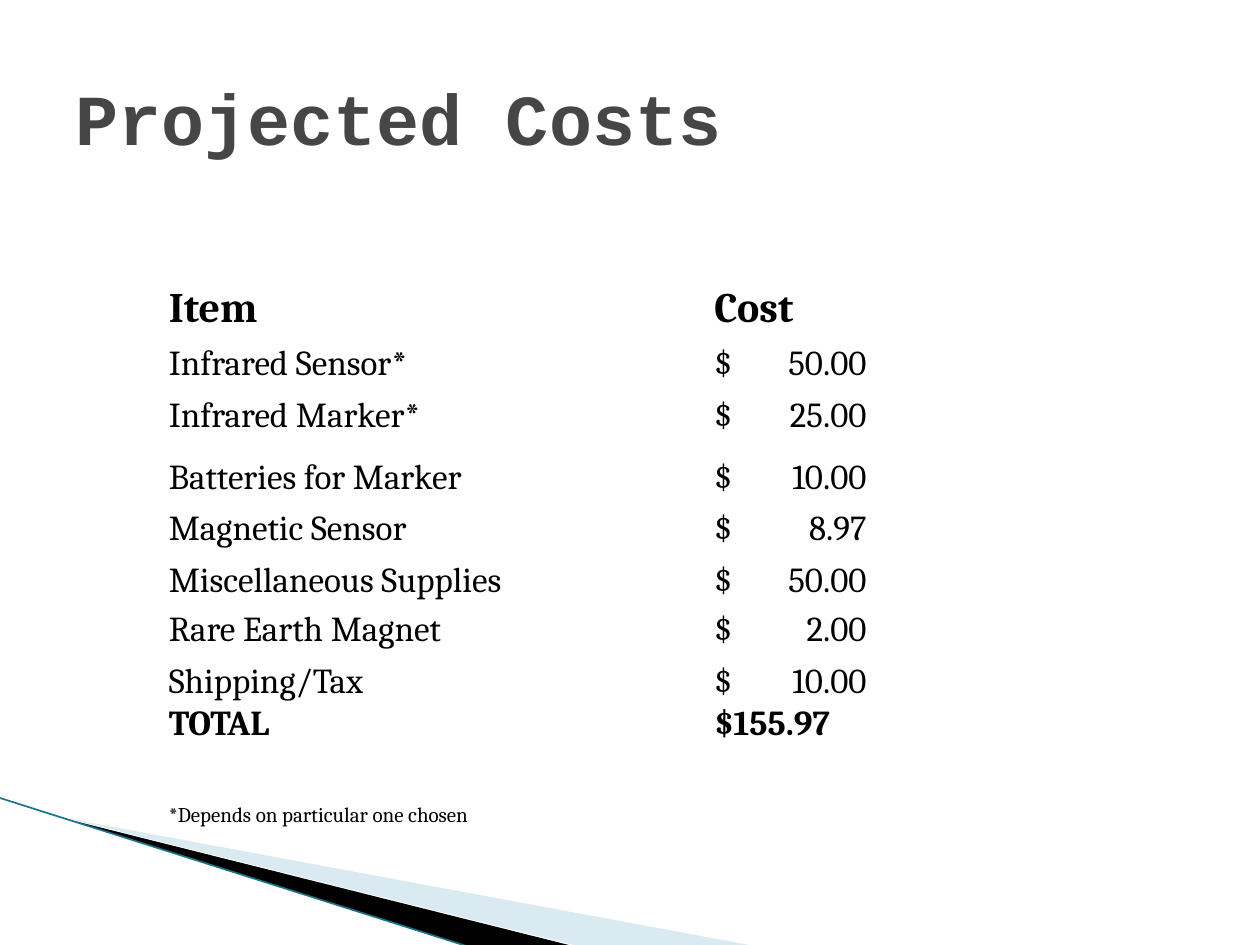
from lxml import etree
from pptx import Presentation
from pptx import util as u
from pptx.dml.color import RGBColor
from pptx.enum import shapes, text
from pptx.oxml import ns

BLACK = RGBColor(0x00, 0x00, 0x00)
GRAY = RGBColor(0x46, 0x46, 0x46)
PALE_BLUE = RGBColor(0xA0, 0xCB, 0xDC)
TEAL = RGBColor(0x1B, 0x75, 0x87)

COSTS = [
    ("Item", "Cost"),
    ("Infrared Sensor*", "$\t50.00"),
    ("Infrared Marker*", "$\t25.00"),
    ("Batteries for Marker", "$\t10.00"),
    ("Magnetic Sensor", "$\t8.97"),
    ("Miscellaneous Supplies", "$\t50.00"),
    ("Rare Earth Magnet", "$\t2.00"),
    ("Shipping/Tax", "$\t10.00"),
    ("TOTAL", "$155.97"),
    ("", ""),
    ("*Depends on particular one chosen", ""),
]
COLUMN_WIDTHS = [307.4, 118.8]
ROW_HEIGHTS = [28.1, 29.5, 29.5, 35.3, 29.5, 29.5, 28.1, 29.5, 24.5, 23.8, 23.8]
ROW_FORMATS = {0: (24, True), 8: (20, True), 10: (12, False)}
AMOUNT_TAB = 87


def set_values(target, values):
    for name, value in values.items():
        setattr(target, name, value)


class SlideBuilder:
    title_format = {"name": "Courier New", "size": u.Pt(41), "bold": True}
    cell_format = {"name": "Cambria"}

    def __init__(self, slide):
        self.slide = slide

    def add_text(self, paragraph, content, font_format, color):
        run = paragraph.add_run()
        run.text = content
        set_values(run.font, font_format)
        run.font.color.rgb = color

    def title(self, content, left, top, width, height):
        shape = self.slide.shapes.title
        set_values(shape, {"left": u.Pt(left), "top": u.Pt(top),
                           "width": u.Pt(width), "height": u.Pt(height)})
        shape.text_frame.vertical_anchor = text.MSO_ANCHOR.MIDDLE
        paragraph = shape.text_frame.paragraphs[0]
        paragraph.alignment = text.PP_ALIGN.LEFT
        self.add_text(paragraph, content, self.title_format, GRAY)

    def wedge(self, points, color, opacity=100):
        builder = self.slide.shapes.build_freeform(*points[0], scale=u.Pt(1))
        builder.add_line_segments(points[1:], close=True)
        shape = builder.convert_to_shape()
        shape.shadow.inherit = False
        shape.fill.solid()
        shape.fill.fore_color.rgb = color
        shape.line.fill.background()
        if opacity < 100:
            fill_color = shape._element.spPr.find(".//" + ns.qn("a:srgbClr"))
            alpha = etree.SubElement(fill_color, ns.qn("a:alpha"))
            alpha.set("val", str(opacity * 1000))

    def line(self, start, end, color, width):
        connector = self.slide.shapes.add_connector(
            shapes.MSO_CONNECTOR.STRAIGHT, *map(u.Pt, start + end))
        connector.line.color.rgb = color
        connector.line.width = u.Pt(width)
        etree.SubElement(connector._element.spPr, ns.qn("a:effectLst"))

    def cell(self, cell, content, size, bold, indent):
        set_values(cell, {"margin_left": u.Pt(indent), "margin_right": u.Pt(0.7),
                          "margin_top": u.Pt(0.7), "margin_bottom": 0,
                          "vertical_anchor": text.MSO_ANCHOR.BOTTOM})
        cell.fill.background()
        if not content:
            return
        paragraph = cell.text_frame.paragraphs[0]
        if "\t" in content:
            tabs = etree.SubElement(paragraph._p.get_or_add_pPr(), ns.qn("a:tabLst"))
            tab = etree.SubElement(tabs, ns.qn("a:tab"))
            tab.set("pos", str(int(u.Pt(AMOUNT_TAB))))
            tab.set("algn", "r")
        font_format = {**self.cell_format, "size": u.Pt(size), "bold": bold}
        self.add_text(paragraph, content, font_format, BLACK)

    def table(self, rows, left, top):
        frame = self.slide.shapes.add_table(
            len(rows), len(COLUMN_WIDTHS), u.Pt(left), u.Pt(top),
            u.Pt(sum(COLUMN_WIDTHS)), u.Pt(sum(ROW_HEIGHTS)))
        table = frame.table
        set_values(table, {"first_row": False, "horz_banding": False})
        for column, width in zip(table.columns, COLUMN_WIDTHS):
            column.width = u.Pt(width)
        for index, (row, height) in enumerate(zip(table.rows, ROW_HEIGHTS)):
            row.height = u.Pt(height)
            size, bold = ROW_FORMATS.get(index, (20, False))
            for cell, content, indent in zip(row.cells, rows[index], (0.7, 5)):
                self.cell(cell, content, size, bold, indent)
        last = len(rows) - 1
        table.cell(last, 0).merge(table.cell(last, 1))


def main():
    presentation = Presentation()
    set_values(presentation, {"slide_width": u.Pt(720), "slide_height": u.Pt(540)})
    slide = presentation.slides.add_slide(presentation.slide_layouts[5])
    builder = SlideBuilder(slide)
    builder.wedge([(39.6, 468.5), (428.4, 540.5), (328.3, 540.5)], PALE_BLUE, 40)
    builder.wedge([(38.2, 467.5), (329, 540.7), (267.8, 541)], BLACK)
    builder.line((-0.7, 455.8), (267.8, 541), TEAL, 0.95)
    builder.title("Projected Costs", 36, 21.6, 648, 90)
    builder.table(COSTS, 95.8, 162)
    presentation.save("out.pptx")


if __name__ == "__main__":
    main()
